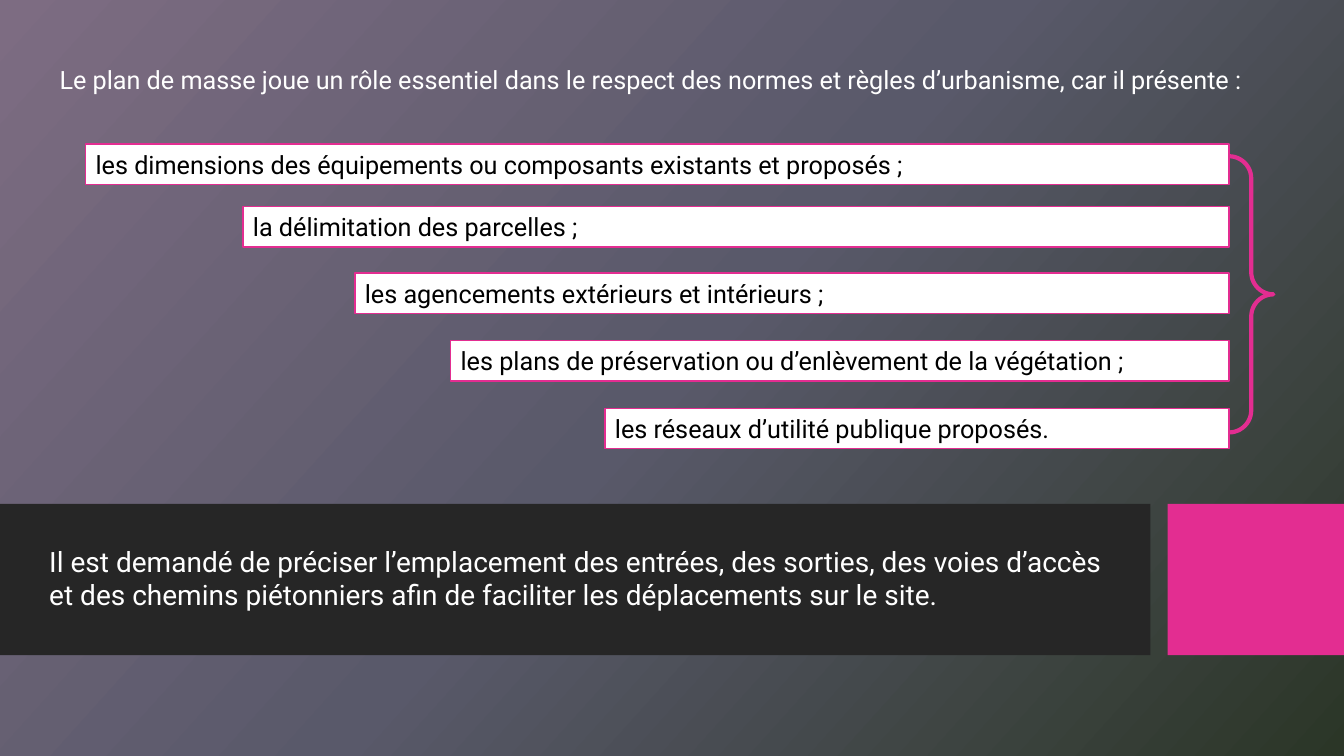
from copy import deepcopy

from lxml.etree import SubElement
from pptx import Presentation
from pptx.dml.color import RGBColor
from pptx.enum.shapes import MSO_SHAPE
from pptx.enum.text import MSO_ANCHOR, PP_ALIGN
from pptx.oxml.ns import qn
from pptx.util import Inches, Pt

COLORS = {
    "mauve": "7D6C82", "slate": "59596A", "moss": "2B3627",
    "coal": "262626", "pink": "E32D91", "white": "FFFFFF", "black": "000000",
}
RIGHT = 12.19
ITEMS = [
    (0.85, 1.43, "les dimensions des équipements ou composants existants et proposés ;"),
    (2.41, 2.05, "la délimitation des parcelles ;"),
    (3.52, 2.71, "les agencements extérieurs et intérieurs ;"),
    (4.47, 3.38, "les plans de préservation ou d’enlèvement de la végétation ;"),
    (6, 4.05, "les réseaux d’utilité publique proposés."),
]
LEAD = ("Le plan de masse joue un rôle essentiel dans le respect des normes "
        "et règles d’urbanisme, car il présente :")
NOTE = ("Il est demandé de préciser l’emplacement des entrées, des sorties, "
        "des voies d’accès et des chemins piétonniers afin de faciliter "
        "les déplacements sur le site.")


def tint(name):
    """Return the named colour."""
    return RGBColor.from_string(COLORS[name])


def paint(slide, names, angle):
    """Fill the background with evenly spaced gradient stops."""
    fill = slide.background.fill
    fill.gradient()
    fill.gradient_angle = angle
    stops = slide.element.find(".//" + qn("a:gsLst"))
    for _ in names[2:]:
        stops.append(deepcopy(stops[0]))
    for i, (stop, name) in enumerate(zip(fill.gradient_stops, names)):
        stop.color.rgb = tint(name)
        stop.position = i / (len(names) - 1)


def write(shape, text, size, color, anchor=MSO_ANCHOR.TOP):
    """Set left-aligned text in a shape."""
    frame = shape.text_frame
    frame.text = text
    frame.word_wrap = True
    frame.vertical_anchor = anchor
    para = frame.paragraphs[0]
    para.alignment = PP_ALIGN.LEFT
    font = para.runs[0].font
    font.name = "Roboto"
    font.size = Pt(size)
    font.color.rgb = tint(color)


def add_box(slide, area, fill, line=None):
    """Add a filled rectangle."""
    box = slide.shapes.add_shape(MSO_SHAPE.RECTANGLE, *map(Inches, area))
    box.shadow.inherit = False
    box.fill.solid()
    box.fill.fore_color.rgb = tint(fill)
    if line:
        box.line.color.rgb = tint(line)
        box.line.width = Pt(1)
    else:
        box.line.fill.background()
    return box


def add_lead(slide):
    """Place the lead sentence in the title placeholder."""
    title = slide.shapes.title
    title.left, title.top = Inches(0.49), Inches(0.59)
    title.width, title.height = Inches(12.6), Inches(0.71)
    write(title, LEAD, 18, "white")


def add_brace(slide):
    """Add the brace that gathers the items."""
    area = map(Inches, (RIGHT, 1.55, 0.44, 2.74))
    brace = slide.shapes.add_shape(MSO_SHAPE.LEFT_BRACE, *area)
    brace.rotation = 180
    brace.adjustments[0] = 0.5
    brace.adjustments[1] = 0.5
    brace.shadow.inherit = False
    brace.fill.background()
    brace.line.color.rgb = tint("pink")
    brace.line.width = Pt(3)


def add_note(slide):
    """Add the closing sentence."""
    area = map(Inches, (0.39, 5.35, 10.84, 0.77))
    write(slide.shapes.add_textbox(*area), NOTE, 20, "white")


def main():
    """Build and save the slide."""
    deck = Presentation()
    deck.slide_width, deck.slide_height = Inches(13.33), Inches(7.5)
    slide = deck.slides.add_slide(deck.slide_layouts[5])
    paint(slide, ["mauve", "slate", "moss"], 318)
    add_box(slide, (0, 5, 11.41, 1.5), "coal")
    add_box(slide, (11.58, 5, 1.75, 1.5), "pink")
    add_lead(slide)
    for left, top, text in ITEMS:
        box = add_box(slide, (left, top, RIGHT - left, 0.4), "white", "pink")
        write(box, text, 18, "black", MSO_ANCHOR.MIDDLE)
    add_brace(slide)
    add_note(slide)
    deck.save("out.pptx")


if __name__ == "__main__":
    main()
